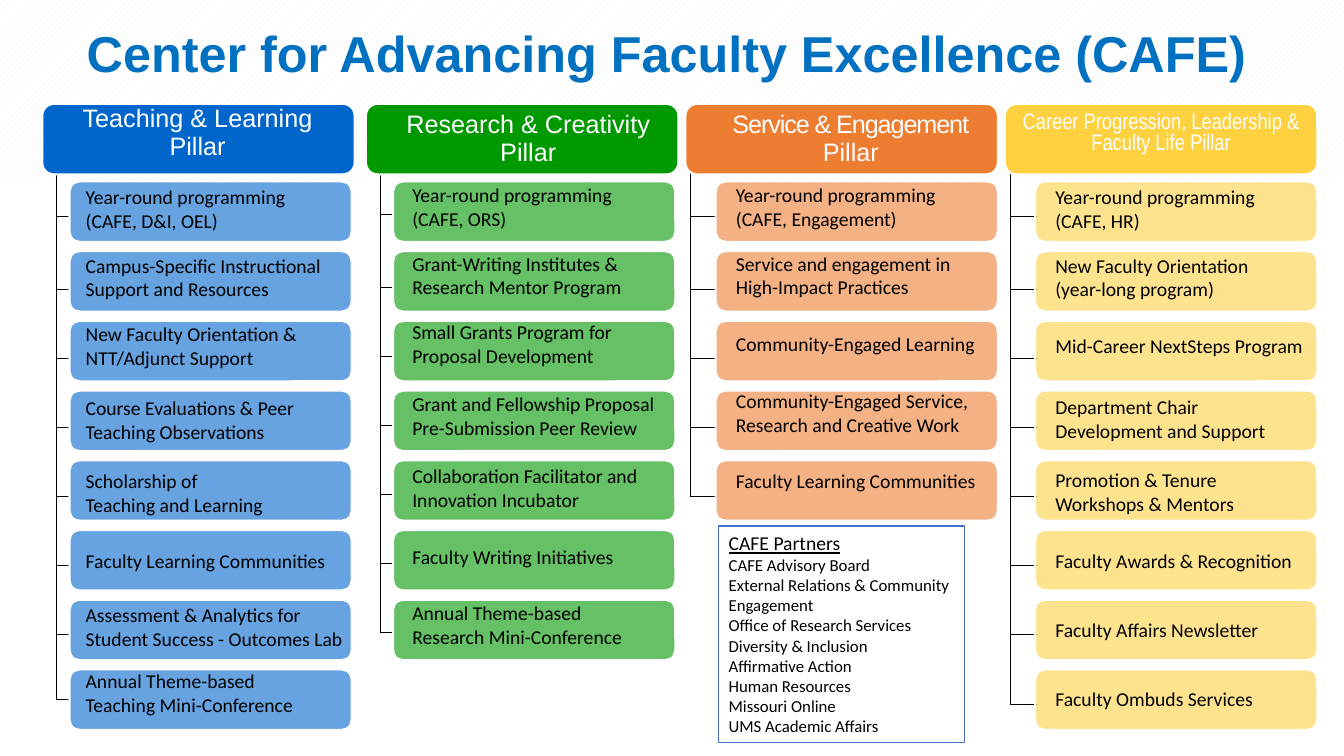
from lxml import etree
from pptx import Presentation
from pptx.dml.color import RGBColor
from pptx.enum.dml import MSO_PATTERN
from pptx.enum.shapes import MSO_CONNECTOR as CONN, MSO_SHAPE as SHAPE
from pptx.enum.text import MSO_ANCHOR as ANCHOR, MSO_AUTO_SIZE as AUTO, PP_ALIGN as ALIGN
from pptx.oxml.ns import qn
from pptx.util import Pt

TITLE = "Center for Advancing Faculty Excellence (CAFE)"
PARTNERS = [
    "CAFE Partners", "CAFE Advisory Board",
    "External Relations & Community Engagement",
    "Office of Research Services\vDiversity & Inclusion",
    "Affirmative Action", "Human Resources", "Missouri Online", "UMS Academic Affairs",
]
# In texts, \v is a line break and \n starts a paragraph.
# box: fill, opacity; table: left, top; cols: widths; rows: heights
# spine: start, trunk x, end
PILLARS = [
    dict(
        name="Teaching & Learning\vPillar", color="0066CC", box=("66A3E0", 100),
        left=30.2, box_left=49.7, font=("Arial", 18), tracking=0,
        table=(30.2, 71.3), cols=(23.8, 198),
        rows=[53.3, 50.4, 47.5, 50.7, 55, 49.3, 47.5, 47.3, 47.3],
        spine=((58.3, 99.4), 40.3, (77.8, 499.7)), tick=18.7, tick_top=154.8, ticks=7,
        items=["Year-round programming\v(CAFE, D&I, OEL)",
               "Campus-Specific Instructional Support and Resources",
               "New Faculty Orientation &\vNTT/Adjunct Support",
               "Course Evaluations & Peer Teaching Observations",
               "Scholarship of\nTeaching and Learning",
               "Faculty Learning Communities",
               "Assessment & Analytics for Student Success - Outcomes Lab",
               "Annual Theme-based\vTeaching Mini-Conference"]),
    dict(
        name="Research & Creativity\vPillar", color="009900", box=("009900", 60),
        left=261.4, box_left=280.8, font=("Arial", 18), tracking=0,
        table=(266.4, 75.6), cols=(20.9, 200.9),
        rows=[48.3, 49, 49, 49, 54] + [49] * 4,
        spine=((275, 87.8), 271.4, (271.4, 452.2)), tick=10, tick_top=153.4, ticks=7,
        items=["Year-round programming\v(CAFE, ORS)",
               "Grant-Writing Institutes & Research Mentor Program",
               "Small Grants Program for Proposal Development",
               "Grant and Fellowship Proposal Pre-Submission Peer Review",
               "Collaboration Facilitator and Innovation Incubator",
               "Faculty Writing Initiatives",
               "Annual Theme-based\vResearch Mini-Conference"]),
    dict(
        name="Service & Engagement\vPillar", color="ED7D31", box=("ED7D31", 60),
        left=489.6, box_left=511.2, font=("Arial", 18), tracking=-80,
        table=(496.8, 75.6), cols=(21.6, 200.2),
        rows=[48.3] + [49] * 8,
        spine=((501.1, 102.2), 493.2, (493.2, 355)), tick=18.7, tick_top=154.8, ticks=5,
        items=["Year-round programming\v(CAFE, Engagement)",
               "Service and engagement in\vHigh-Impact Practices",
               "Community-Engaged Learning",
               "Community-Engaged Service, Research and Creative Work",
               "Faculty Learning Communities"]),
    dict(
        name="Career Progression, Leadership & Faculty Life Pillar", color="FED141",
        box=("FED141", 59), left=717.8, box_left=739.4,
        font=("Arial Narrow", 16), tracking=0,
        table=(717.8, 77), cols=(28.8, 194.4),
        rows=[48.3, 49, 49, 49, 55.4, 49, 49, 49.7, 49],
        spine=((730.8, 102.2), 722, (740.9, 503.3)), tick=18.7, tick_top=154.8, ticks=7,
        items=["Year-round programming\v(CAFE, HR)",
               "New Faculty Orientation\v(year-long program)",
               "Mid-Career NextSteps Program",
               "Department Chair\vDevelopment and Support",
               "Promotion & Tenure\vWorkshops & Mentors",
               "Faculty Awards & Recognition",
               "Faculty Affairs Newsletter",
               "Faculty Ombuds Services"]),
]
HEADER_TOP, HEADER_W, HEADER_H = 74.2, 223.2, 50.4
BOX_TOP, BOX_W, BOX_H, BOX_PITCH = 129.6, 201.6, 43.2, 49.8
FIRST_TICK_GAP, TICK_PITCH = 51.8, 49.3
NO_GRID = "{2D5ABB26-0587-4C30-8999-92F81FD0307C}"

prs = Presentation()
prs.slide_width, prs.slide_height = Pt(960), Pt(540)
s = prs.slides.add_slide(prs.slide_layouts[5])


def rgb(value):
    return RGBColor.from_string(value)


def style(p, font, size, color, **extra):
    for r in p.runs:
        r.font.name, r.font.size = font, Pt(size)
        r.font.color.rgb = rgb(color)
        for key, value in extra.items():
            setattr(r.font, key, value)


def add_box(kind, x, y, w, h, fill=None, alpha=100, line=None, width=1.5):
    sp = s.shapes.add_shape(kind, Pt(x), Pt(y), Pt(w), Pt(h))
    sp.shadow.inherit = False
    if fill:
        sp.fill.solid()
        sp.fill.fore_color.rgb = rgb(fill)
        if alpha < 100:
            clr = sp._element.spPr.find(qn("a:solidFill"))[0]
            etree.SubElement(clr, qn("a:alpha"), val=str(alpha * 1000))
    else:
        sp.fill.background()
    if line:
        sp.line.color.rgb, sp.line.width = rgb(line), Pt(width)
    else:
        sp.line.fill.background()
    return sp


def add_line(kind, start, end):
    cn = s.shapes.add_connector(kind, *(Pt(v) for v in start + end))
    cn.line.color.rgb, cn.line.width = rgb("000000"), Pt(0.5)
    etree.SubElement(cn._element.spPr, qn("a:effectLst"))
    return cn


def add_branches(pillar):
    start, trunk, end = pillar["spine"]
    cn = add_line(CONN.ELBOW, start, end)
    bend = round((trunk - start[0]) / (end[0] - start[0]) * 100000)
    guides = cn._element.spPr.find(qn("a:prstGeom")).get_or_add_avLst()
    etree.SubElement(guides, qn("a:gd"), name="adj1", fmla=f"val {bend}")
    for i in range(pillar["ticks"]):
        y = pillar["tick_top"] + (FIRST_TICK_GAP + TICK_PITCH * (i - 1) if i else 0)
        add_line(CONN.STRAIGHT, (trunk + pillar["tick"], y), (trunk, y))


def add_texts(pillar):
    """Lay the pillar's name and items over its boxes as a table without grid."""
    x, y = pillar["table"]
    cols, rows = pillar["cols"], pillar["rows"]
    table = s.shapes.add_table(len(rows), 2, Pt(x), Pt(y), Pt(sum(cols)), Pt(sum(rows))).table
    table._tbl.tblPr.find(qn("a:tableStyleId")).text = NO_GRID
    table.first_row = table.horz_banding = False
    for col, w in zip(table.columns, cols):
        col.width = Pt(w)
    for row, h in zip(table.rows, rows):
        row.height = Pt(h)
    for cell in table.iter_cells():
        cell.fill.background()

    head = table.cell(0, 0)
    head.merge(table.cell(0, 1))
    head.text_frame.text = pillar["name"]
    p = head.text_frame.paragraphs[0]
    p.alignment = ALIGN.CENTER
    style(p, *pillar["font"], "FFFFFF")
    if pillar["tracking"]:
        p.runs[0].font._element.set("spc", str(pillar["tracking"]))

    for i, item in enumerate(pillar["items"], 1):
        cell = table.cell(i, 1)
        cell.vertical_anchor = ANCHOR.MIDDLE
        cell.margin_left, cell.margin_right = Pt(7.2), Pt(5.8)
        cell.margin_top = cell.margin_bottom = Pt(6.5)
        cell.text_frame.text = item
        for p in cell.text_frame.paragraphs:
            style(p, "Calibri", 14, "000000")


band = add_box(SHAPE.RECTANGLE, 0, 0, 960, 129.6)
band.fill.patterned()
band.fill.pattern = MSO_PATTERN.WIDE_UPWARD_DIAGONAL
band.fill.fore_color.rgb, band.fill.back_color.rgb = rgb("F2F2F2"), rgb("FFFFFF")
s.shapes._spTree.insert(2, band._element)

title = s.shapes.title
title.left, title.top, title.width, title.height = Pt(0), Pt(-37.4), Pt(952.6), Pt(100.8)
tf = title.text_frame
tf.text, tf.vertical_anchor, tf.word_wrap = TITLE, ANCHOR.BOTTOM, True
p = tf.paragraphs[0]
p.alignment, p.line_spacing = ALIGN.CENTER, 0.9
style(p, "Arial", 36, "0070C0", bold=True)

for pillar in PILLARS:
    add_branches(pillar)
    add_box(SHAPE.ROUNDED_RECTANGLE, pillar["left"], HEADER_TOP, HEADER_W, HEADER_H,
            pillar["color"], line="FFFFFF")
    for i in range(len(pillar["items"])):
        add_box(SHAPE.ROUNDED_RECTANGLE, pillar["box_left"], BOX_TOP + i * BOX_PITCH,
                BOX_W, BOX_H, *pillar["box"], line="FFFFFF")
for pillar in PILLARS:
    add_texts(pillar)

partners = add_box(SHAPE.RECTANGLE, 513.4, 375.8, 175.7, 154.8, line="4472C4", width=1)
tf = partners.text_frame
tf.word_wrap, tf.auto_size, tf.vertical_anchor = True, AUTO.SHAPE_TO_FIT_TEXT, ANCHOR.TOP
tf.margin_right = 0
tf.text = "\n".join(PARTNERS)
for i, p in enumerate(tf.paragraphs):
    p.alignment = ALIGN.LEFT
    style(p, "Calibri", 12 if i else 14, "000000", underline=i == 0)

prs.save("out.pptx")
